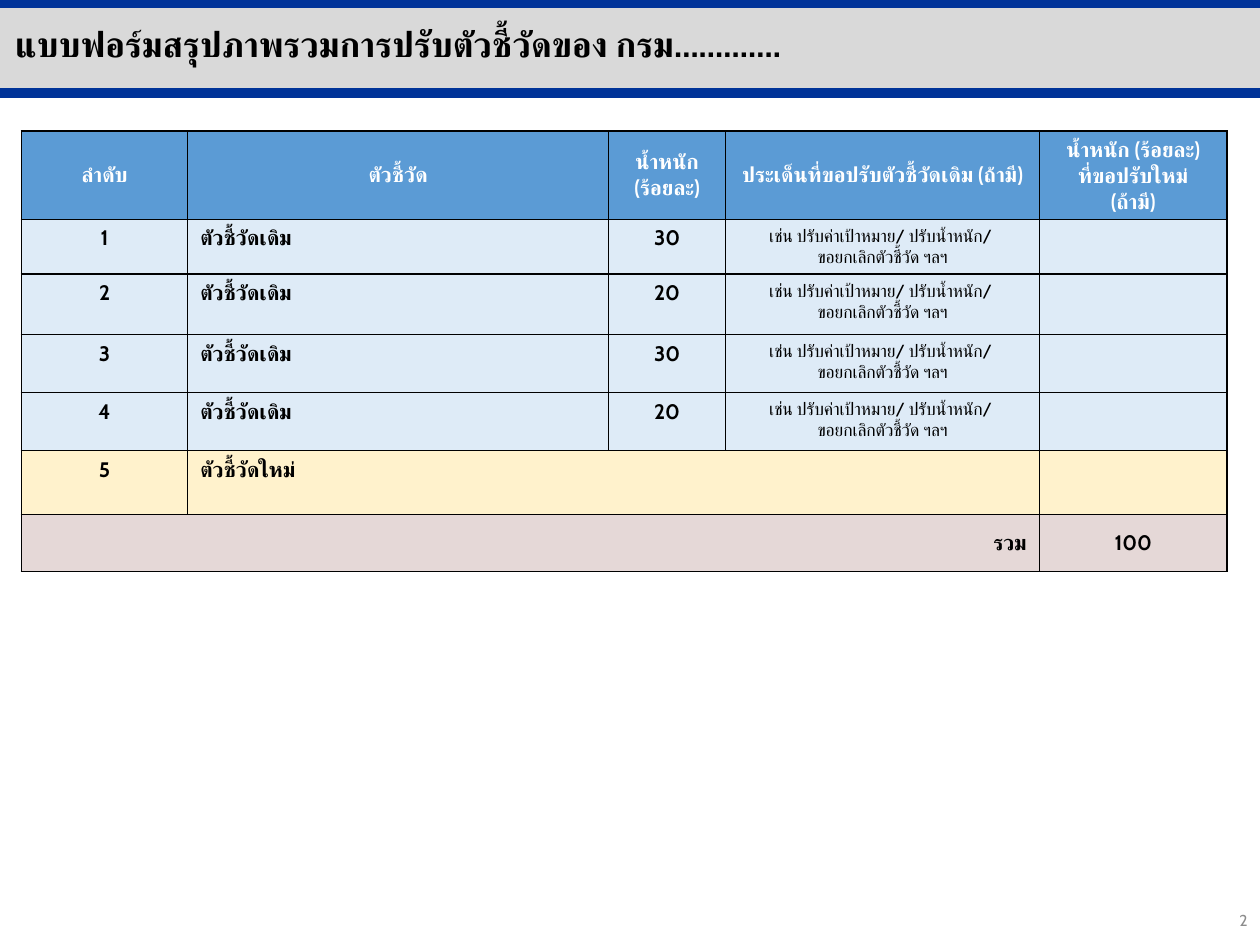
from lxml.etree import SubElement
from pptx import Presentation
from pptx.dml.color import RGBColor
from pptx.enum.shapes import MSO_CONNECTOR as CONN, MSO_SHAPE as SHAPE
from pptx.enum.text import MSO_ANCHOR as ANCHOR, MSO_AUTO_SIZE as AUTO, PP_ALIGN as ALIGN
from pptx.oxml.ns import qn
from pptx.util import Inches, Pt


def rgb(value):
    return RGBColor.from_string(value)


def write(tf, text, size=12, color="000000", bold=True, align=ALIGN.CENTER, anchor=ANCHOR.TOP):
    tf.word_wrap = True
    tf.vertical_anchor = anchor
    for i, line in enumerate(text.split("\n")):
        p = tf.add_paragraph() if i else tf.paragraphs[0]
        p.alignment = align
        for j, part in enumerate(line.split("\v")):
            if j:
                p.add_line_break()
            r = p.add_run()
            r.text = part
            r.font.name = "Cabin"
            r.font.size = Pt(size)
            r.font.bold = bold
            r.font.color.rgb = rgb(color)
            SubElement(r.font._element, qn("a:cs"), typeface="Cabin")


prs = Presentation()
prs.slide_width, prs.slide_height = Inches(10), Inches(7.5)
s = prs.slides.add_slide(prs.slide_layouts[5])

band = s.shapes.add_shape(SHAPE.RECTANGLE, Inches(0), Inches(0.05), Inches(10), Inches(0.68))
band.shadow.inherit = False
band.fill.solid()
band.fill.fore_color.rgb = rgb("D9D9D9")
band.line.fill.background()

for y in (0.74, 0.02):
    rule = s.shapes.add_connector(CONN.STRAIGHT, Inches(0), Inches(y), Inches(10), Inches(y))
    rule.line.color.rgb = rgb("003399")
    rule.line.width = Pt(6)
    SubElement(rule._element.spPr, qn("a:effectLst"))

title = s.shapes.title
title.left, title.top, title.width, title.height = Inches(0.02), Inches(0.13), Inches(9.31), Inches(0.44)
title.text_frame.auto_size = AUTO.NONE
write(title.text_frame, "แบบฟอร์มสรุปภาพรวมการปรับตัวชี้วัดของ กรม………….", size=20, align=ALIGN.LEFT)
s.shapes._spTree.append(title._element)

number = s.shapes.add_textbox(Inches(7.75), Inches(7.1), Inches(2.25), Inches(0.4))
write(number.text_frame, "2", size=9, color="8C8C8C", bold=False, align=ALIGN.RIGHT, anchor=ANCHOR.MIDDLE)

widths = [1.32, 3.34, 0.93, 2.49, 1.49]
heights = [0.7, 0.43, 0.48, 0.46, 0.46, 0.51, 0.45]
fills = ["5B9BD5"] + ["DEEBF7"] * 4 + ["FFF2CC", "E5D8D7"]
headers = [
    "ลำดับ",
    "ตัวชี้วัด",
    "น้ำหนัก\v(ร้อยละ)",
    "ประเด็นที่ขอปรับตัวชี้วัดเดิม (ถ้ามี)",
    "น้ำหนัก (ร้อยละ)\vที่ขอปรับใหม่\n(ถ้ามี)",
]
example = "เช่น ปรับค่าเป้าหมาย/ ปรับน้ำหนัก/ \vขอยกเลิกตัวชี้วัด ฯลฯ"

table = s.shapes.add_table(len(heights), len(widths), Inches(0.17), Inches(1.04),
                           Inches(sum(widths)), Inches(sum(heights))).table
for col, width in zip(table.columns, widths):
    col.width = Inches(width)
for row, height, fill in zip(table.rows, heights, fills):
    row.height = Inches(height)
    for cell in row.cells:
        tcPr = cell._tc.get_or_add_tcPr()
        for side in ("lnL", "lnR", "lnT", "lnB"):
            ln = SubElement(tcPr, qn(f"a:{side}"), w=str(Pt(1)))
            SubElement(SubElement(ln, qn("a:solidFill")), qn("a:srgbClr"), val="000000")
        cell.fill.solid()
        cell.fill.fore_color.rgb = rgb(fill)

for c, text in enumerate(headers):
    cell = table.cell(0, c)
    cell.vertical_anchor = ANCHOR.MIDDLE
    write(cell.text_frame, text, color="FFFFFF", anchor=None)

for r, weight in enumerate(["30", "20", "30", "20"], start=1):
    write(table.cell(r, 0).text_frame, str(r), anchor=None)
    write(table.cell(r, 1).text_frame, "ตัวชี้วัดเดิม", align=ALIGN.LEFT, anchor=None)
    write(table.cell(r, 2).text_frame, weight, anchor=None)
    write(table.cell(r, 3).text_frame, example, size=10, bold=False, anchor=None)

table.cell(5, 1).merge(table.cell(5, 3))
write(table.cell(5, 0).text_frame, "5", anchor=None)
write(table.cell(5, 1).text_frame, "ตัวชี้วัดใหม่", align=ALIGN.LEFT, anchor=None)

table.cell(6, 0).merge(table.cell(6, 3))
for c, text, align in ((0, "รวม", ALIGN.RIGHT), (4, "100", ALIGN.CENTER)):
    cell = table.cell(6, c)
    cell.vertical_anchor = ANCHOR.MIDDLE
    write(cell.text_frame, text, align=align, anchor=None)

prs.save("out.pptx")
